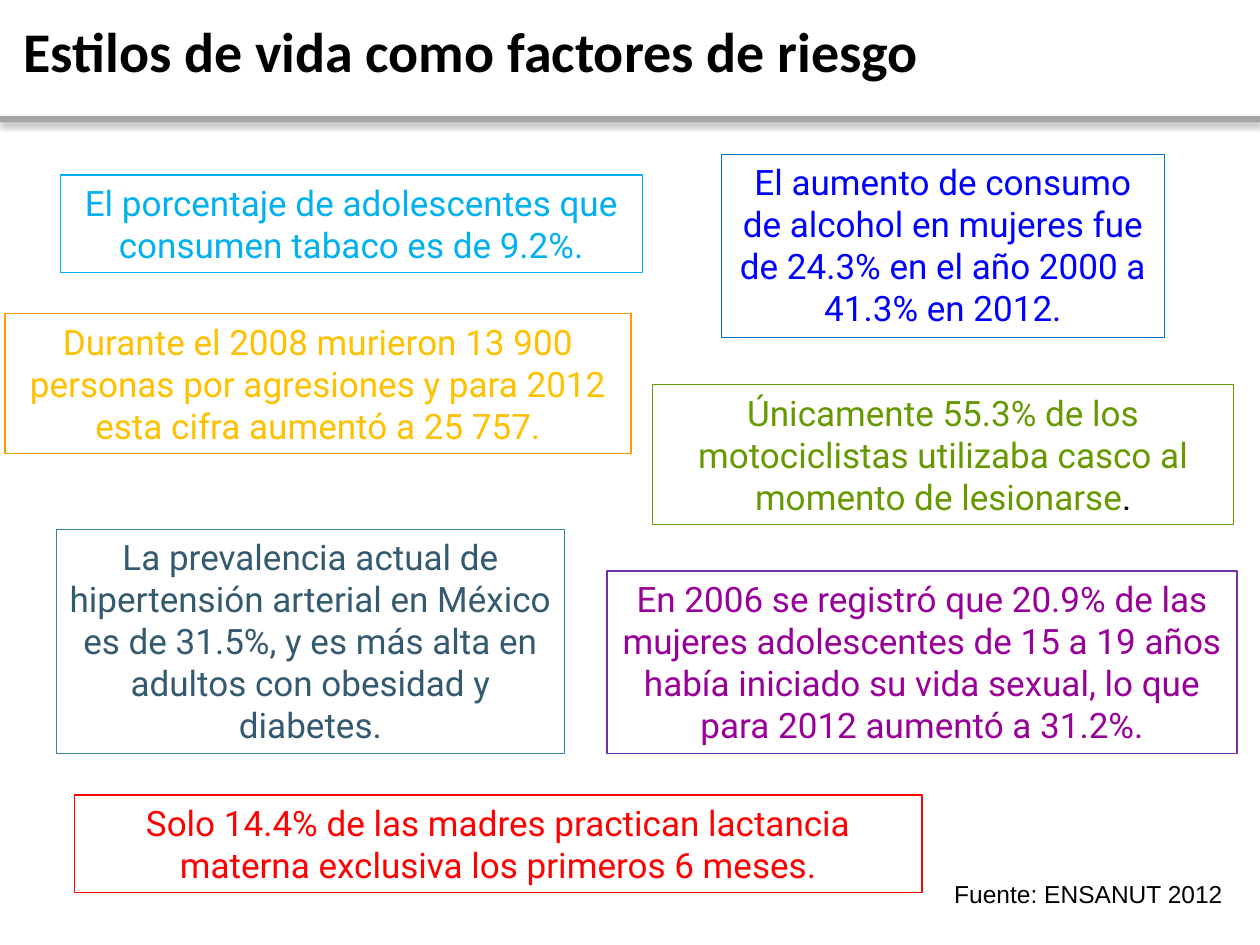
from dataclasses import dataclass

from lxml import etree
from pptx import Presentation
from pptx import util as u
from pptx.dml.color import RGBColor
from pptx.enum import shapes, text
from pptx.oxml import ns

MID, TOP = text.MSO_ANCHOR.MIDDLE, text.MSO_ANCHOR.TOP
CENTER, RIGHT = text.PP_ALIGN.CENTER, text.PP_ALIGN.RIGHT


@dataclass
class Run:
    words: str
    color: str = "000000"
    size: int = 20
    font: str = "Roboto"
    bold: bool = False


@dataclass
class Box:
    """A block of text; lengths in centimetres."""
    left: float
    top: float
    width: float
    height: float
    runs: list[Run]
    line: str = ""
    anchor: text.MSO_ANCHOR = TOP
    align: text.PP_ALIGN = CENTER
    grow: bool = True


def paint(fmt, color: str) -> None:
    fmt.rgb = RGBColor.from_string(color)


def add_rect(slide, *area: float):
    rect = slide.shapes.add_shape(
        shapes.MSO_SHAPE.RECTANGLE, *(u.Cm(n) for n in area))
    rect.shadow.inherit = False
    return rect


def add_bar(slide) -> None:
    """Grey rule under the title, with a soft shadow below it."""
    bar = add_rect(slide, 0, 2.34, 25.4, 0.13)
    bar.fill.solid()
    paint(bar.fill.fore_color, "A6A6A6")
    bar.line.fill.background()
    effect = bar._element.spPr.find(ns.qn("a:effectLst"))
    shade = etree.SubElement(effect, ns.qn("a:outerShdw"), blurRad="40000",
                             dist="23000", dir="5400000", rotWithShape="0")
    tone = etree.SubElement(shade, ns.qn("a:srgbClr"), val="000000")
    etree.SubElement(tone, ns.qn("a:alpha"), val="35000")


def add_box(slide, box: Box) -> None:
    area = box.left, box.top, box.width, box.height
    if box.line:
        shape = add_rect(slide, *area)
        shape.fill.background()
        paint(shape.line.color, box.line)
        shape.line.width = u.Pt(0.75)
    else:
        shape = slide.shapes.add_textbox(*(u.Cm(n) for n in area))
    frame = shape.text_frame
    frame.word_wrap = True
    frame.vertical_anchor = box.anchor
    if box.grow:
        frame.auto_size = text.MSO_AUTO_SIZE.SHAPE_TO_FIT_TEXT
    para = frame.paragraphs[0]
    para.alignment = box.align
    for item in box.runs:
        run = para.add_run()
        run.text = item.words
        run.font.name = item.font
        run.font.size = u.Pt(item.size)
        run.font.bold = item.bold
        paint(run.font.color, item.color)


BOXES = [
    # Title and source
    Box(0, 0.2, 19, 1.96, [Run("Estilos de vida como factores de riesgo",
                               size=32, font="Calibri", bold=True)],
        grow=False),
    Box(14.1, 17.6, 10.8, 0.86,
        [Run("Fuente: ENSANUT 2012", size=14, font="Arial")], align=RIGHT),
    # Framed facts
    Box(12.24, 11.51, 12.7, 3.68, [Run(
        "En 2006 se registró que 20.9% de las mujeres adolescentes de 15 a 19 "
        "años había iniciado su vida sexual, lo que para 2012 aumentó a "
        "31.2%.", "990099")], "7030A0"),
    Box(1.14, 10.67, 10.24, 4.52, [Run(
        "La prevalencia actual de hipertensión arterial en México es de "
        "31.5%, y es más alta en adultos con obesidad y diabetes.",
        "345A70")], "31859C"),
    Box(1.5, 16.03, 17.09, 1.96, [Run(
        "Solo 14.4% de las madres practican lactancia materna exclusiva los "
        "primeros 6 meses.", "FF0000")], "FF0000"),
    Box(13.16, 7.75, 11.71, 2.82, [Run(
        "Únicamente 55.3% de los motociclistas utilizaba casco al momento de "
        "lesionarse", "669900"), Run(".")], "669900", MID),
    Box(0.1, 6.32, 12.62, 2.82, [Run(
        "Durante el 2008 murieron 13 900 personas por agresiones y para 2012 "
        "esta cifra aumentó a 25 757.", "FFC000")], "FF9900", MID),
    Box(14.55, 3.12, 8.92, 3.68, [Run(
        "El aumento de consumo de alcohol en mujeres fue de 24.3% en el año "
        "2000 a 41.3% en 2012.", "0000FF")], "0070C0"),
    Box(1.22, 3.53, 11.73, 1.96, [Run(
        "El porcentaje de adolescentes que consumen tabaco es de 9.2%.",
        "00B0F0")], "00B0F0"),
]


def main() -> None:
    deck = Presentation()
    deck.slide_width, deck.slide_height = u.Cm(25.4), u.Cm(19.05)
    slide = deck.slides.add_slide(deck.slide_layouts[6])
    add_bar(slide)
    for box in BOXES:
        add_box(slide, box)
    deck.save("out.pptx")


if __name__ == "__main__":
    main()
